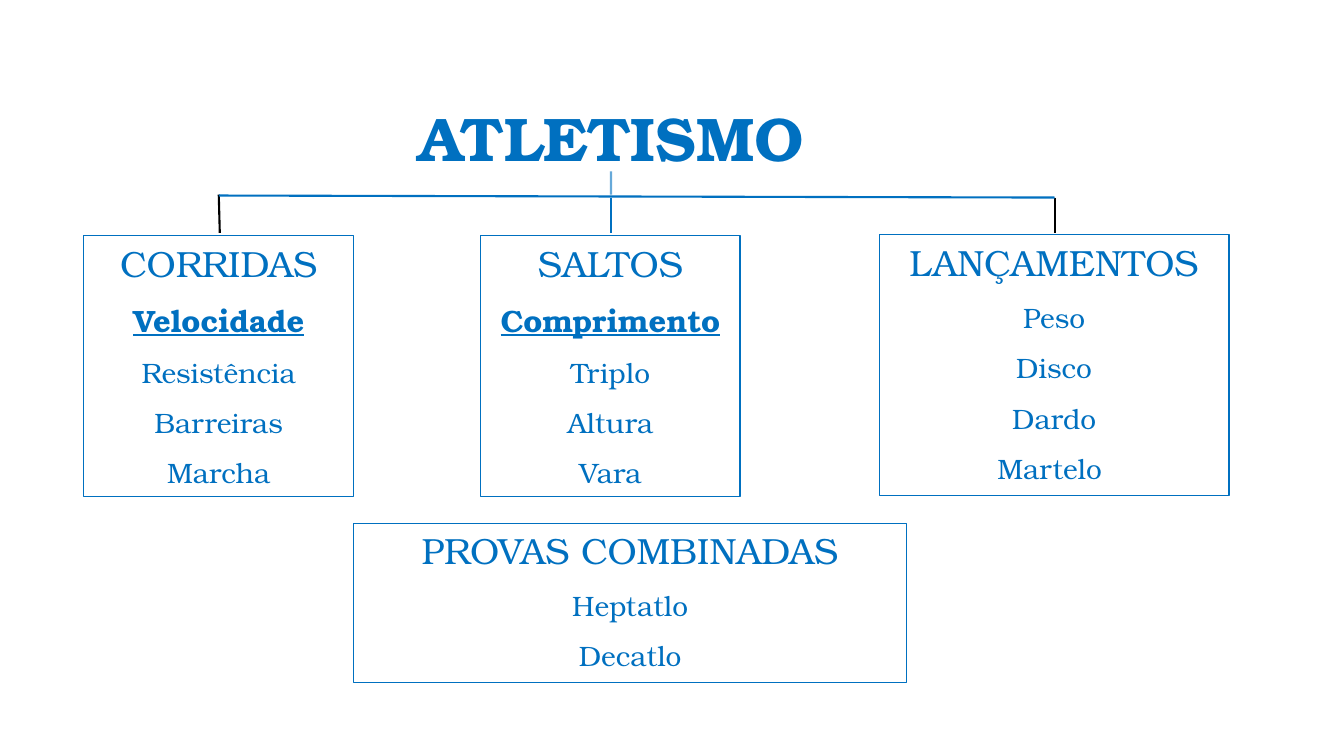
import pptx
import pptx.dml.color
import pptx.enum.shapes
import pptx.enum.text
import pptx.oxml
import pptx.oxml.ns
import pptx.util
from lxml import etree

Inches, Pt = pptx.util.Inches, pptx.util.Pt
BLUE = pptx.dml.color.RGBColor(0x00, 0x70, 0xC0)
BLACK = pptx.dml.color.RGBColor(0x00, 0x00, 0x00)
FONT = "TeX Gyre Bonum"

GROUPS = [
    ((4.77, 2.34, 2.57, 2.59), "SALTOS", "Comprimento", ["Triplo", "Altura", "Vara"]),
    ((0.83, 2.34, 2.68, 2.59), "CORRIDAS", "Velocidade",
     ["Resistência", "Barreiras", "Marcha"]),
    ((8.72, 2.33, 3.47, 2.59), "LANÇAMENTOS", None,
     ["Peso", "Disco", "Dardo", "Martelo "]),
    ((3.51, 5.19, 5.48, 1.58), "PROVAS COMBINADAS", None, ["Heptatlo", "Decatlo"]),
]


def add_box(slide, box):
    """Add an empty wrapping text box and return it."""
    shape = slide.shapes.add_textbox(*map(Inches, box))
    shape.text_frame.word_wrap = True
    return shape


def style(para, text, size, after, strong=False, under=False):
    """Fill a centred paragraph in the blue slide font."""
    para.text = text
    para.alignment = pptx.enum.text.PP_ALIGN.CENTER
    para.space_after = Pt(after)
    font = para.font
    font.name, font.size, font.bold, font.underline = FONT, Pt(size), strong, under
    font.color.rgb = BLUE


def add_title(slide, box):
    """Write the heading in the middle of its box."""
    frame = add_box(slide, box).text_frame
    frame.vertical_anchor = pptx.enum.text.MSO_ANCHOR.MIDDLE
    para = frame.paragraphs[0]
    style(para, "ATLETISMO", 44, 6, strong=True)
    para.space_before = Pt(9)


def add_group(slide, box, head, key, events):
    """Draw a framed list with a heading and an optional stressed event."""
    shape = add_box(slide, box)
    shape.line.color.rgb = BLUE
    shape.line.width = Pt(0.75)
    frame = shape.text_frame
    frame.auto_size = pptx.enum.text.MSO_AUTO_SIZE.SHAPE_TO_FIT_TEXT
    style(frame.paragraphs[0], head, 26, 12)
    if key:
        style(frame.add_paragraph(), key, 22, 12, strong=True, under=True)
    for event in events:
        style(frame.add_paragraph(), event, 20, 12)


def add_line(slide, start, end, color, alpha=None):
    """Draw a straight line, see-through if alpha is given in percent."""
    line = slide.shapes.add_connector(
        pptx.enum.shapes.MSO_CONNECTOR.STRAIGHT, *map(Inches, start + end))
    line.line.color.rgb = color
    line.line.width = Pt(1.5)
    props = line._element.spPr
    if alpha:
        tint = props.find(".//" + pptx.oxml.ns.qn("a:srgbClr"))
        etree.SubElement(tint, pptx.oxml.ns.qn("a:alpha"), val=str(alpha * 1000))
    etree.SubElement(props, pptx.oxml.ns.qn("a:effectLst"))


def add_tree(slide, left, mid, right, top, bar, foot):
    """Join the heading to the three columns below it."""
    add_line(slide, (right, bar), (right, foot), BLACK)
    add_line(slide, (left, bar - 0.03), (left + 0.01, foot), BLACK)
    add_line(slide, (left, bar - 0.02), (right, bar), BLUE)
    add_line(slide, (mid, bar - 0.03), (mid, top), BLUE, alpha=60)
    add_line(slide, (mid, bar), (mid, foot), BLUE)


def main():
    """Build the slide and save it."""
    deck = pptx.Presentation()
    deck.slide_width, deck.slide_height = Inches(13.33), Inches(7.5)
    slide = deck.slides.add_slide(deck.slide_layouts[6])
    add_title(slide, (2.96, 0.86, 6.2, 0.99))
    for group in GROUPS:
        add_group(slide, *group)
    add_tree(slide, 2.17, 6.06, 10.46, 1.7, 1.96, 2.31)
    deck.save("out.pptx")


if __name__ == "__main__":
    main()
